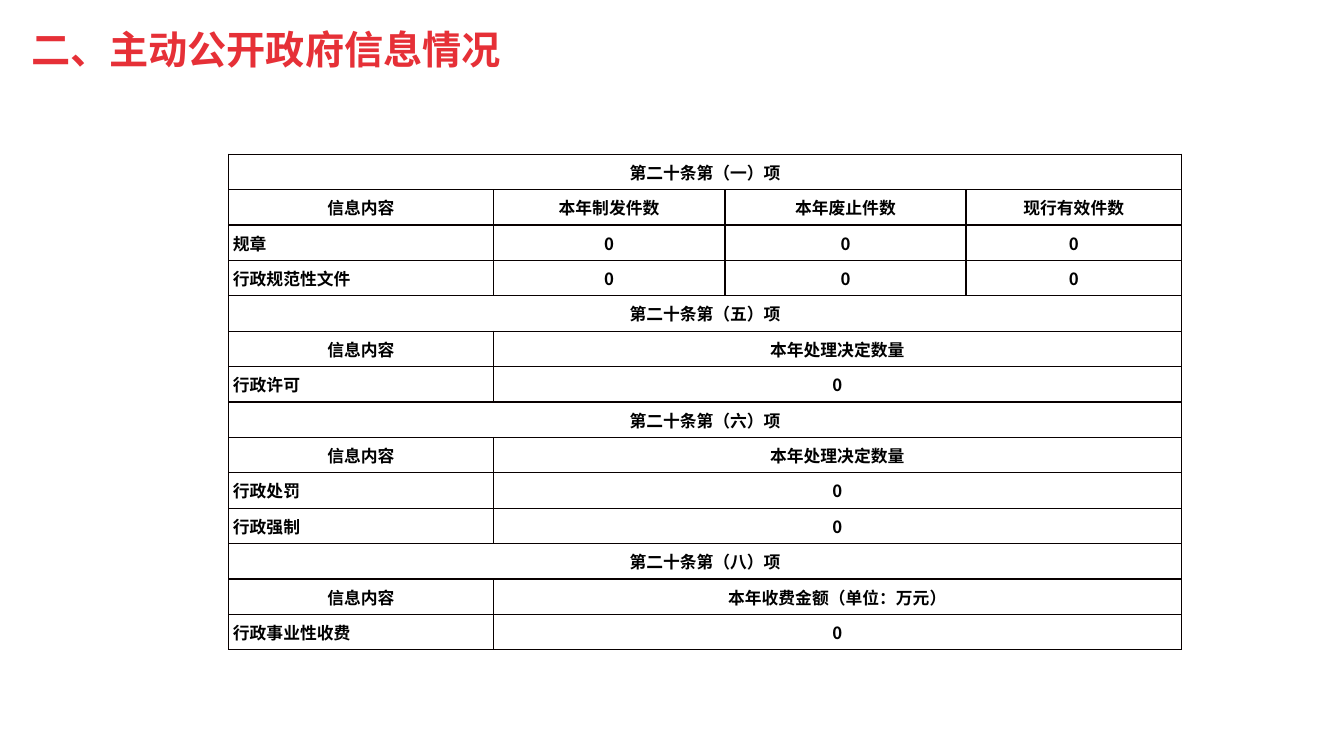
from dataclasses import dataclass

from lxml.etree import SubElement
from pptx import Presentation
from pptx.dml.color import RGBColor
from pptx.enum.text import MSO_ANCHOR, MSO_AUTO_SIZE, PP_ALIGN
from pptx.oxml.ns import qn
from pptx.slide import Slide
from pptx.table import Table, _Cell
from pptx.text.text import _Paragraph
from pptx.util import Pt


@dataclass(frozen=True)
class TextStyle:
    font: str
    size: float
    color: str


@dataclass(frozen=True)
class Theme:
    title: TextStyle = TextStyle("Montserrat", 28, "E63037")
    table: TextStyle = TextStyle("Noto Sans CJK SC", 12, "000000")
    east_asian_font: str = "Noto Sans CJK SC"
    cell_fill: str = "FFFFFF"
    border_color: str = "080000"
    border_width: float = 1


@dataclass(frozen=True)
class Section:
    heading: str
    columns: list[str]
    items: list[str]

    def rows(self) -> list[list[str]]:
        zeros = ["0"] * (len(self.columns) - 1)
        return [[self.heading], self.columns, *([item, *zeros] for item in self.items)]


THEME = Theme()
COLUMN_WIDTHS = [188.9, 165.6, 172.2, 153.9]
ROW_HEIGHT = 25.3
LABEL = "信息内容"
DECISIONS = "本年处理决定数量"
SECTIONS = [
    Section("第二十条第（一）项",
            [LABEL, "本年制发件数", "本年废止件数", "现行有效件数"],
            ["规章", "行政规范性文件"]),
    Section("第二十条第（五）项", [LABEL, DECISIONS], ["行政许可"]),
    Section("第二十条第（六）项", [LABEL, DECISIONS], ["行政处罚", "行政强制"]),
    Section("第二十条第（八）项", [LABEL, "本年收费金额（单位：万元）"], ["行政事业性收费"]),
]


def set_attributes(target: object, values: dict[str, object]) -> None:
    for name, value in values.items():
        setattr(target, name, value)


def write_text(para: _Paragraph, text: str, style: TextStyle) -> None:
    span = para.add_run()
    span.text = text
    set_attributes(span.font, {"name": style.font, "size": Pt(style.size), "bold": True})
    span.font.color.rgb = RGBColor.from_string(style.color)
    east_asian = SubElement(span._r.get_or_add_rPr(), qn("a:ea"))
    east_asian.set("typeface", THEME.east_asian_font)


def add_title(page: Slide, text: str) -> None:
    box = page.shapes.title
    set_attributes(box, {"left": Pt(15), "top": Pt(14.4), "width": Pt(828), "height": Pt(44.6)})
    set_attributes(box.text_frame, {
        "vertical_anchor": MSO_ANCHOR.MIDDLE,
        "word_wrap": True,
        "auto_size": MSO_AUTO_SIZE.NONE,
    })
    para = box.text_frame.paragraphs[0]
    set_attributes(para, {"alignment": PP_ALIGN.LEFT, "line_spacing": 0.9})
    write_text(para, text, THEME.title)


def format_cell(cell: _Cell) -> None:
    properties = cell._tc.get_or_add_tcPr()
    for side in ("lnL", "lnR", "lnT", "lnB"):
        border = SubElement(properties, qn(f"a:{side}"), w=str(Pt(THEME.border_width)))
        fill = SubElement(border, qn("a:solidFill"))
        SubElement(fill, qn("a:srgbClr"), val=THEME.border_color)
    cell.fill.solid()
    cell.fill.fore_color.rgb = RGBColor.from_string(THEME.cell_fill)
    set_attributes(cell, {
        "margin_left": Pt(3),
        "margin_right": Pt(3),
        "margin_top": Pt(0),
        "margin_bottom": Pt(0),
        "vertical_anchor": MSO_ANCHOR.MIDDLE,
    })


def fill_row(table: Table, row: int, texts: list[str], is_item: bool) -> None:
    last = len(texts) - 1
    end = len(COLUMN_WIDTHS) - 1
    if last < end:
        table.cell(row, last).merge(table.cell(row, end))
    for column, text in enumerate(texts):
        para = table.cell(row, column).text_frame.paragraphs[0]
        para.alignment = PP_ALIGN.LEFT if is_item and column == 0 else PP_ALIGN.CENTER
        write_text(para, text, THEME.table)


def add_disclosure_table(page: Slide, sections: list[Section]) -> None:
    rows = [(texts, index > 1) for section in sections
            for index, texts in enumerate(section.rows())]
    table = page.shapes.add_table(
        len(rows), len(COLUMN_WIDTHS), Pt(163.4), Pt(110.2),
        Pt(sum(COLUMN_WIDTHS)), Pt(ROW_HEIGHT * len(rows))).table
    set_attributes(table, {"first_row": False, "horz_banding": False})
    for column, width in zip(table.columns, COLUMN_WIDTHS):
        column.width = Pt(width)
    for row in table.rows:
        row.height = Pt(ROW_HEIGHT)
    for cell in table.iter_cells():
        format_cell(cell)
    for index, (texts, is_item) in enumerate(rows):
        fill_row(table, index, texts, is_item)


def main() -> None:
    deck = Presentation()
    set_attributes(deck, {"slide_width": Pt(960), "slide_height": Pt(540)})
    page = deck.slides.add_slide(deck.slide_layouts.get_by_name("Title Only"))
    add_title(page, "二、主动公开政府信息情况")
    add_disclosure_table(page, SECTIONS)
    deck.save("out.pptx")


if __name__ == "__main__":
    main()
